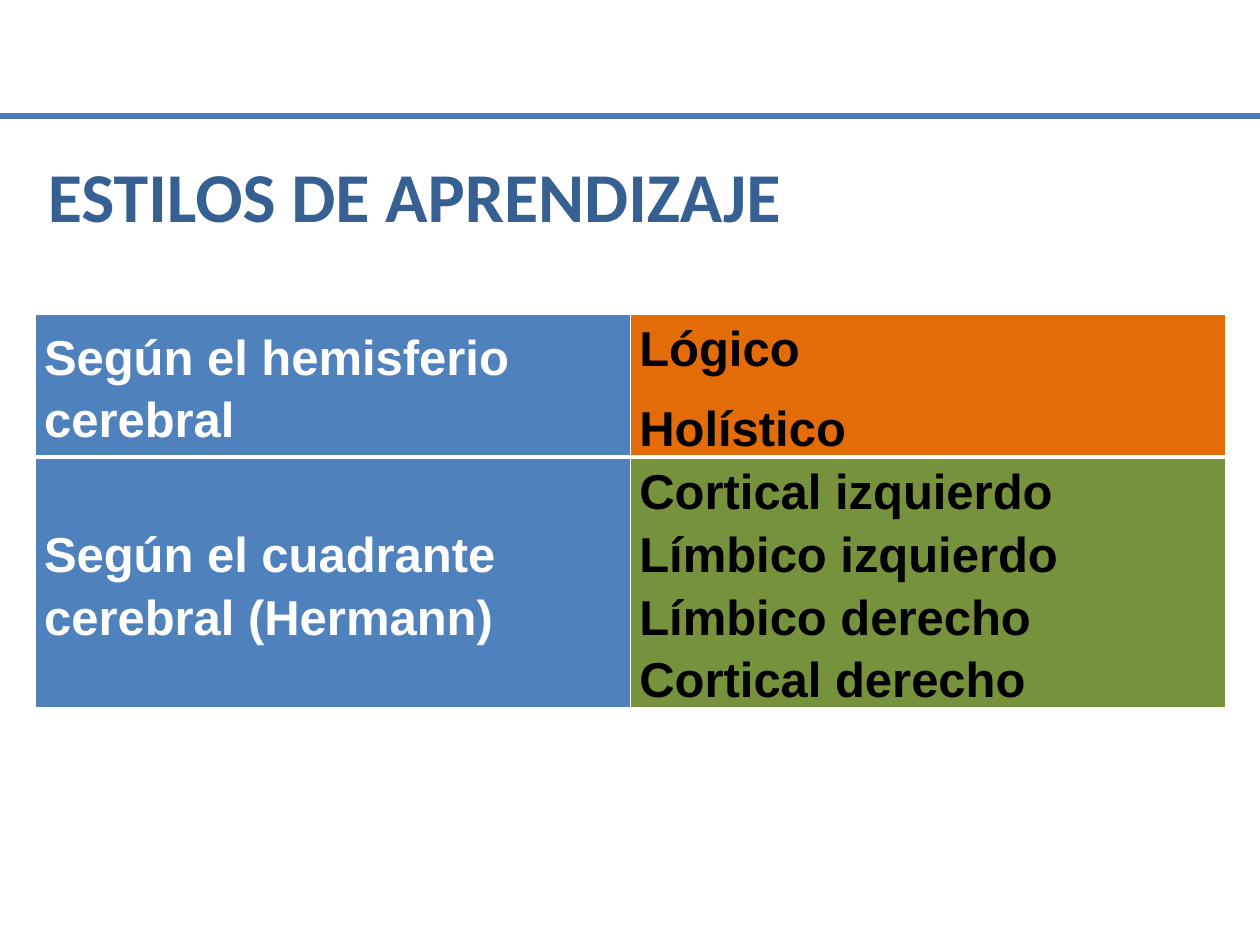
from dataclasses import dataclass

import pptx
import pptx.dml.color
import pptx.enum.shapes
import pptx.enum.text
import pptx.oxml
import pptx.oxml.ns
import pptx.oxml.xmlchemy
import pptx.util
from pptx.util import Inches

ALIGN = pptx.enum.text.PP_ALIGN
ANCHOR = pptx.enum.text.MSO_ANCHOR


@dataclass(frozen=True)
class Theme:
    rule: str = "4A7DBA"
    title: str = "366092"
    label: str = "4F81BD"
    hemisphere: str = "E36C09"
    quadrant: str = "76923C"
    white: str = "FFFFFF"
    black: str = "000000"
    title_font: str = "Calibri"
    table_font: str = "Arial"
    title_size: int = 40
    table_size: int = 28


THEME = Theme()


def rgb(value):
    return pptx.dml.color.RGBColor.from_string(value)


def write(tf, text, *, font, size, color, align=ALIGN.LEFT, spacing=None, before=0):
    """Write one bold paragraph per line of text."""
    for i, line in enumerate(text.split("\n")):
        p = tf.paragraphs[0] if i == 0 else tf.add_paragraph()
        p.alignment = align
        p.line_spacing = spacing
        p.space_before = pptx.util.Pt(before if i else 0)
        r = p.add_run()
        r.text = line
        r.font.name = font
        r.font.size = pptx.util.Pt(size)
        r.font.bold = True
        r.font.color.rgb = rgb(color)


def add_rule(s, y, width):
    line = s.shapes.add_connector(
        pptx.enum.shapes.MSO_CONNECTOR.STRAIGHT, 0, Inches(y), Inches(width), Inches(y))
    line.line.color.rgb = rgb(THEME.rule)
    line.line.width = pptx.util.Pt(3)
    line._element.spPr.append(pptx.oxml.xmlchemy.OxmlElement("a:effectLst"))


def set_title(s, text):
    title = s.shapes.title
    title.left, title.top = Inches(0.28), Inches(0.92)
    title.width, title.height = Inches(9), Inches(1.25)
    title.text_frame.vertical_anchor = ANCHOR.MIDDLE
    write(title.text_frame, text, font=THEME.title_font,
          size=THEME.title_size, color=THEME.title)


def set_borders(cell, **widths):
    """Draw white cell borders; keys are sides, values are points."""
    tcPr = cell._tc.get_or_add_tcPr()
    for i, side in enumerate("LRTB"):
        ln = pptx.oxml.parse_xml(
            f'<a:ln{side} {pptx.oxml.ns.nsdecls("a")} w="{pptx.util.Pt(widths.get(side, 1))}">'
            f'<a:solidFill><a:srgbClr val="{THEME.white}"/></a:solidFill></a:ln{side}>')
        tcPr.insert(i, ln)


def fill_cell(cell, text, fill, color, anchor, **fmt):
    cell.fill.solid()
    cell.fill.fore_color.rgb = rgb(fill)
    cell.margin_left = cell.margin_right = Inches(0.07)
    cell.margin_top = cell.margin_bottom = 0
    cell.vertical_anchor = anchor
    write(cell.text_frame, text, font=THEME.table_font, size=THEME.table_size,
          color=color, spacing=1.15, **fmt)


def add_styles_table(s, rows, heights):
    table = s.shapes.add_table(len(rows), 2, Inches(0.28), Inches(2.49),
                               Inches(9.45), Inches(sum(heights))).table
    for i, (label, label_align, styles, fill, before) in enumerate(rows):
        table.rows[i].height = Inches(heights[i])
        left, right = table.cell(i, 0), table.cell(i, 1)
        fill_cell(left, label, THEME.label, THEME.white, ANCHOR.MIDDLE, align=label_align)
        fill_cell(right, styles, fill, THEME.black, ANCHOR.TOP,
                  align=ALIGN.JUSTIFY, before=before)
        for cell in (left, right):
            set_borders(cell, **({"B": 3} if i == 0 else {"T": 3}))


def main():
    prs = pptx.Presentation()
    prs.slide_width, prs.slide_height = Inches(10), Inches(7.5)
    s = prs.slides.add_slide(prs.slide_layouts[5])

    # Header
    add_rule(s, 0.92, 10)
    set_title(s, "ESTILOS DE APRENDIZAJE")

    # Learning styles by brain model
    add_styles_table(s, [
        ("Según el hemisferio cerebral", ALIGN.LEFT,
         "Lógico\nHolístico", THEME.hemisphere, 10),
        ("Según el cuadrante\ncerebral (Hermann)", ALIGN.JUSTIFY,
         "Cortical izquierdo\nLímbico izquierdo\nLímbico derecho\nCortical derecho",
         THEME.quadrant, 0),
    ], heights=[1.13, 1.98])

    prs.save("out.pptx")


if __name__ == "__main__":
    main()
